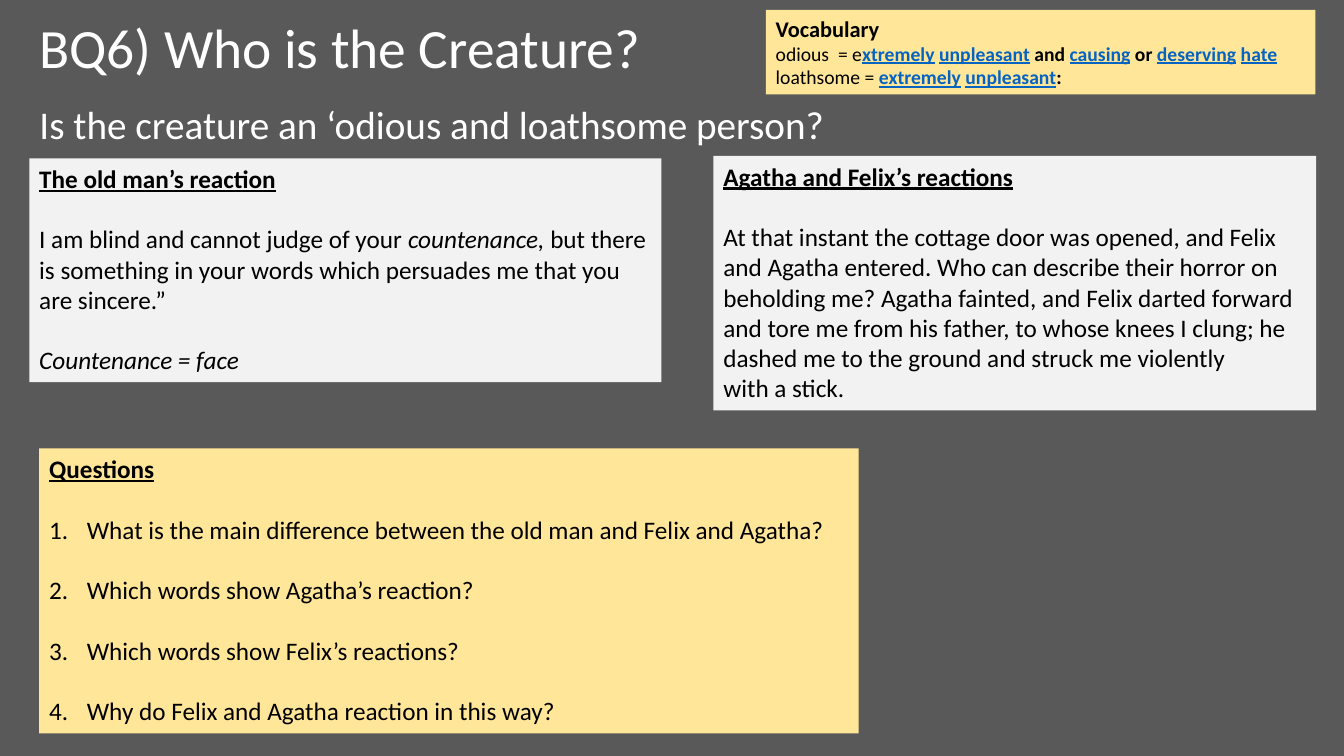
from lxml import etree
from pptx import Presentation
from pptx.dml.color import RGBColor
from pptx.enum import text
from pptx.oxml.ns import qn
from pptx.util import Cm, Pt

COLOURS = {"background": "595959", "heading": "FFFFFF", "ink": "000000",
           "quote": "F2F2F2", "task": "FFE699", "link": "0563C1"}
FONT = "Calibri"
BLANK_LINE = Pt(21.6)


def colour(name):
    return RGBColor.from_string(COLOURS[name])


def style(paragraph, size, ink="ink"):
    paragraph.font.name = FONT
    paragraph.font.size = Pt(size)
    paragraph.font.color.rgb = colour(ink)
    paragraph.alignment = text.PP_ALIGN.LEFT


def place(part, box):
    part.left, part.top, part.width, part.height = map(Cm, box)


def fill_placeholder(placeholder, box, wording, size, anchor):
    place(placeholder, box)
    frame = placeholder.text_frame
    frame.text = wording
    frame.auto_size = text.MSO_AUTO_SIZE.NONE
    frame.vertical_anchor = anchor
    line = frame.paragraphs[0]
    style(line, size, "heading")
    line.line_spacing = 0.9
    return line


def set_bullet(paragraph, tag, indent, **attributes):
    """Give the paragraph a hanging indent and the bullet element named by tag."""
    properties = paragraph._p.get_or_add_pPr()
    properties.set("marL", str(indent))
    properties.set("indent", str(-indent))
    etree.SubElement(properties, qn(tag), attributes)


def add_panel(slide, box, fill, heading, size=18, underline=True):
    panel = slide.shapes.add_textbox(*map(Cm, box))
    panel.fill.solid()
    panel.fill.fore_color.rgb = colour(fill)
    frame = panel.text_frame
    frame.word_wrap = True
    frame.auto_size = text.MSO_AUTO_SIZE.SHAPE_TO_FIT_TEXT
    title = frame.paragraphs[0]
    title.text = heading
    style(title, size)
    title.font.bold = True
    title.font.underline = underline
    return frame


def add_line(frame, wording, size=18, gap=0):
    line = frame.add_paragraph()
    line.text = wording
    style(line, size)
    line.space_before = gap
    return line


def add_old_man(slide, box):
    frame = add_panel(slide, box, "quote", "The old man’s reaction")
    speech = add_line(frame, "I am blind and cannot judge of your ", gap=BLANK_LINE)
    key_word = speech.add_run()
    key_word.text = "countenance,"
    key_word.font.italic = True
    speech.add_run().text = (" but there is something in your words which "
                             "persuades me that you are sincere.”")
    meaning = add_line(frame, "Countenance = face", gap=BLANK_LINE)
    meaning.font.italic = True


def add_agatha_and_felix(slide, box):
    frame = add_panel(slide, box, "quote", "Agatha and Felix’s reactions")
    add_line(frame, "At that instant the cottage door was opened, and Felix and Agatha "
                    "entered. Who can describe their horror on beholding me? Agatha "
                    "fainted, and Felix darted forward and tore me from his father, to "
                    "whose knees I clung; he dashed me to the ground and struck me "
                    "violently", gap=BLANK_LINE)
    add_line(frame, "with a stick.")


def add_questions(slide, box):
    frame = add_panel(slide, box, "task", "Questions")
    for question in ("What is the main difference between the old man and Felix and Agatha?",
                     "Which words show Agatha’s reaction?",
                     "Which words show Felix’s reactions?",
                     "Why do Felix and Agatha reaction in this way?"):
        line = add_line(frame, question, gap=BLANK_LINE)
        set_bullet(line, "a:buAutoNum", Cm(0.95), type="arabicPeriod")


def add_vocabulary(slide, box):
    frame = add_panel(slide, box, "task", "Vocabulary", size=16, underline=False)
    definitions = (
        ("odious  = e", ("xtremely", " ", "unpleasant", " and ", "causing", " or ",
                         "deserving", " ", "hate")),
        ("loathsome = ", ("extremely", " ", "unpleasant", ":")),
    )
    for term, meaning in definitions:
        line = add_line(frame, term, size=14)
        for index, wording in enumerate(meaning):
            run = line.add_run()
            run.text = wording
            run.font.bold = True
            if index % 2 == 0:  # dictionary words alternate with joining words
                run.font.underline = True
                run.font.color.rgb = colour("link")


def main():
    deck = Presentation()
    deck.slide_width, deck.slide_height = Cm(33.87), Cm(19.05)
    slide = deck.slides.add_slide(deck.slide_layouts[1])
    slide.background.fill.solid()
    slide.background.fill.fore_color.rgb = colour("background")

    fill_placeholder(slide.shapes.title, (0.74, 0.74, 28.6, 1.07),
                     "BQ6) Who is the Creature?", 39.6, text.MSO_ANCHOR.MIDDLE)
    subtitle = fill_placeholder(slide.placeholders[1], (0.74, 2.54, 32.72, 16.13),
                                "Is the creature an ‘odious and loathsome person?",
                                28, text.MSO_ANCHOR.TOP)
    subtitle.space_before = Pt(10)
    set_bullet(subtitle, "a:buNone", 0)

    add_old_man(slide, (0.74, 3.99, 15.93, 5.64))
    add_agatha_and_felix(slide, (17.98, 3.93, 15.19, 6.41))
    add_questions(slide, (0.99, 11.3, 20.65, 7.18))
    add_vocabulary(slide, (19.3, 0.25, 13.85, 2.13))
    deck.save("out.pptx")


if __name__ == "__main__":
    main()
